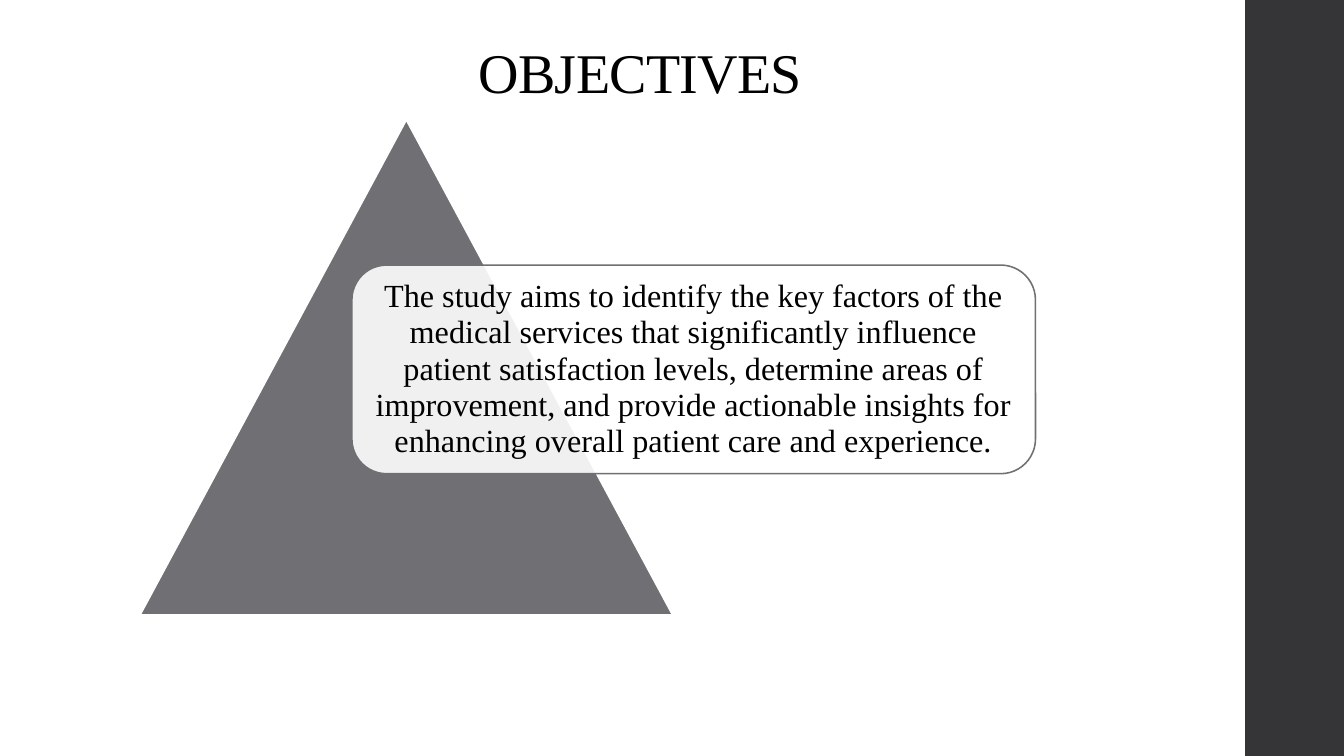
import pptx
import pptx.util
import pptx.dml.color
import pptx.enum.shapes
import pptx.enum.text
import pptx.oxml
import pptx.oxml.ns
import lxml.etree

Inches = pptx.util.Inches
Pt = pptx.util.Pt
Kind = pptx.enum.shapes.MSO_SHAPE
Anchor = pptx.enum.text.MSO_ANCHOR

GOAL = (
    "The study aims to identify the key factors of the medical services "
    "that significantly influence patient satisfaction levels, determine "
    "areas of improvement, and provide actionable insights for enhancing "
    "overall patient care and experience."
)


def color(code):
    return pptx.dml.color.RGBColor.from_string(code)


class Page:
    """Holds the style and the current slide."""

    font = "Times New Roman"
    ink = "000000"
    paper = "FFFFFF"
    gray = "6F6F74"
    dark = "353537"

    def __init__(self, deck):
        self.slide = deck.slides.add_slide(deck.slide_layouts[5])
        back = self.slide.background.fill
        back.solid()
        back.fore_color.rgb = color(self.paper)

    def title(self, text, box):
        item = self.slide.shapes.title
        item.left, item.top, item.width, item.height = map(Inches, box)
        run = self.label(item, text, 40, 0.9, Anchor.TOP)
        run._r.get_or_add_rPr().set("spc", "-50")

    def shape(self, kind, box, fill, line=None, alpha=None):
        item = self.slide.shapes.add_shape(kind, *map(Inches, box))
        item.shadow.inherit = False
        item.fill.solid()
        item.fill.fore_color.rgb = color(fill)
        if alpha:
            tone = item._element.spPr.find(".//" + pptx.oxml.ns.qn("a:srgbClr"))
            part = lxml.etree.SubElement(tone, pptx.oxml.ns.qn("a:alpha"))
            part.set("val", str(alpha * 1000))
        if line:
            item.line.color.rgb = color(line)
            item.line.width = Pt(1.1)
        else:
            item.line.fill.background()
        return item

    def label(self, item, text, size, space, anchor):
        """Fill a shape with one centred paragraph and return its run."""
        frame = item.text_frame
        frame.word_wrap = True
        frame.auto_size = pptx.enum.text.MSO_AUTO_SIZE.NONE
        frame.vertical_anchor = anchor
        para = frame.paragraphs[0]
        para.alignment = pptx.enum.text.PP_ALIGN.CENTER
        para.line_spacing = space
        run = para.add_run()
        run.text = text
        run.font.name = self.font
        run.font.size = Pt(size)
        run.font.color.rgb = color(self.ink)
        return run


def main():
    deck = pptx.Presentation()
    deck.slide_width = Inches(13.33)
    deck.slide_height = Inches(7.5)

    page = Page(deck)
    page.shape(Kind.RECTANGLE, (12.35, 0, 0.98, 7.5), page.dark)
    page.shape(Kind.ISOSCELES_TRIANGLE, (1.39, 1.19, 5.28, 4.91),
               page.gray, page.paper)
    card = page.shape(Kind.ROUNDED_RECTANGLE, (3.49, 2.63, 6.78, 2.07),
                      page.paper, page.gray, alpha=90)
    page.label(card, GOAL, 23, 0.94, Anchor.MIDDLE)
    page.title("OBJECTIVES", (0.72, 0.4, 11.26, 1.45))

    deck.save("out.pptx")


if __name__ == "__main__":
    main()
